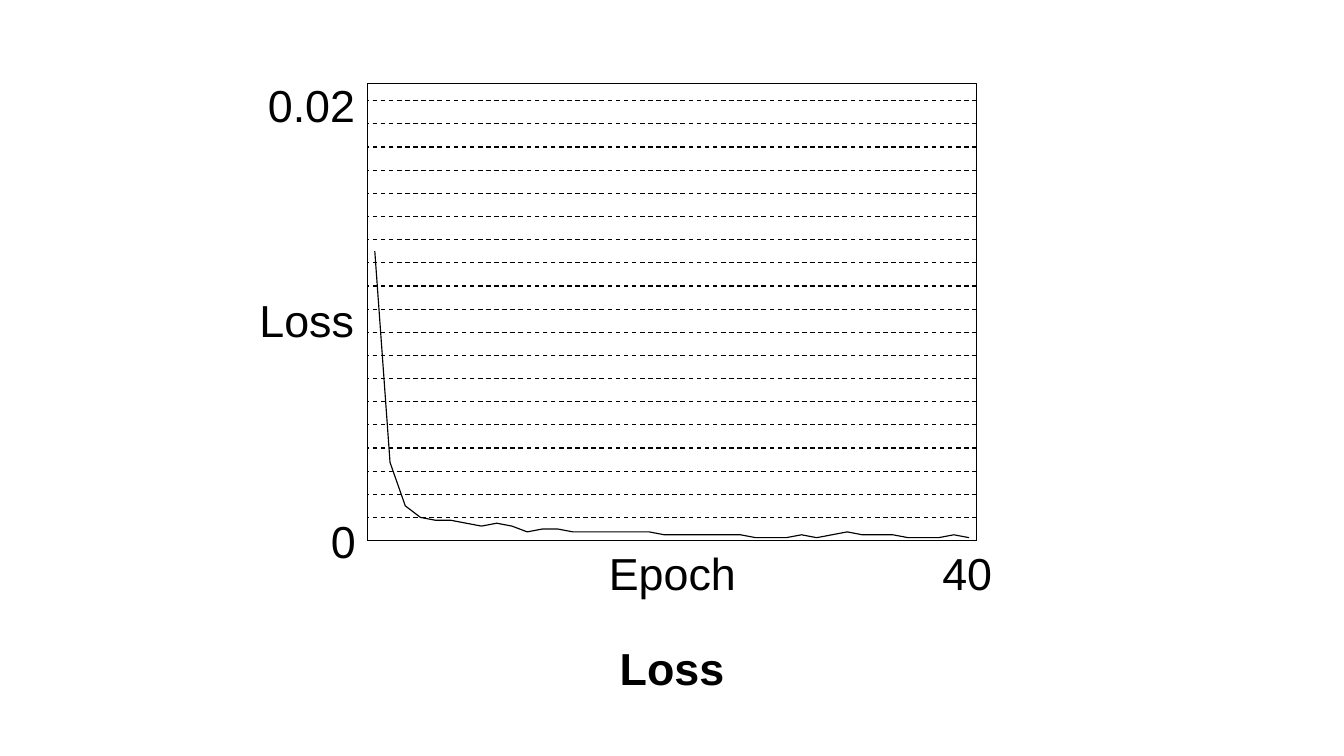
from dataclasses import dataclass

from pptx import Presentation
from pptx.chart.data import CategoryChartData
from pptx.dml.color import RGBColor
from pptx.enum.chart import XL_CHART_TYPE, XL_MARKER_STYLE, XL_TICK_LABEL_POSITION, XL_TICK_MARK
from pptx.enum.dml import MSO_LINE
from pptx.enum.text import MSO_ANCHOR, MSO_AUTO_SIZE, PP_ALIGN
from pptx.oxml import parse_xml
from pptx.oxml.ns import nsdecls
from pptx.util import Inches, Pt

LINE_CHART = XL_CHART_TYPE.LINE
NO_MARKER = XL_MARKER_STYLE.NONE
NO_LABELS = XL_TICK_LABEL_POSITION.NONE
NO_TICKS = XL_TICK_MARK.NONE
DASH = MSO_LINE.DASH
MIDDLE = MSO_ANCHOR.MIDDLE
GROW = MSO_AUTO_SIZE.SHAPE_TO_FIT_TEXT
CENTER = PP_ALIGN.CENTER

COLUMNS, ROWS = 16, 9
TITLE_ONLY = 5
PLOT_INSET = 0.02

LOSSES = [
    100, 27, 12, 8, 7, 7, 6, 5, 6, 5,
    3, 4, 4, 3, 3, 3, 3, 3, 3, 2,
    2, 2, 2, 2, 2, 1, 1, 1, 2, 1,
    2, 3, 2, 2, 2, 1, 1, 1, 2, 1,
]

LABELS = [
    ("Epoch", (7.15, 6.45, 1.73, 0.75)),
    ("Loss", (2.99, 3.43, 1.34, 0.75)),
    ("40", (11.12, 6.45, 0.8, 0.75)),
    ("0.02", (3.09, 0.88, 1.25, 0.75)),
    ("0", (3.84, 6.07, 0.5, 0.75)),
]


@dataclass(frozen=True)
class Theme:
    font: str = "Arial"
    ink: str = "000000"
    label_size: float = 38.4
    chart_size: float = 10
    line_width: float = 1


class LossSlide:
    """Draws titles, labels and line charts on a grid of columns and rows."""

    def __init__(self, presentation, theme):
        self.theme = theme
        self.ink = RGBColor.from_string(theme.ink)
        self.column = presentation.slide_width / COLUMNS
        self.row = presentation.slide_height / ROWS
        self.slide = presentation.slides.add_slide(presentation.slide_layouts[TITLE_ONLY])

    def place(self, box):
        left, top, width, height = box
        return (round(left * self.column), round(top * self.row),
                round(width * self.column), round(height * self.row))

    def style_font(self, font, size, bold=False):
        font.name = self.theme.font
        font.size = Pt(size)
        font.bold = bold
        font.color.rgb = self.ink

    def style_line(self, line):
        line.color.rgb = self.ink
        line.width = Pt(self.theme.line_width)

    def set_text(self, text_frame, text, bold=False):
        text_frame.text = text
        paragraph = text_frame.paragraphs[0]
        self.style_font(paragraph.runs[0].font, self.theme.label_size, bold)
        return paragraph

    def title(self, text, box):
        title = self.slide.shapes.title
        title.left, title.top, title.width, title.height = self.place(box)
        title.text_frame.vertical_anchor = MIDDLE
        self.set_text(title.text_frame, text, bold=True).alignment = CENTER

    def label(self, text, box):
        text_frame = self.slide.shapes.add_textbox(*self.place(box)).text_frame
        text_frame.word_wrap = False
        text_frame.auto_size = GROW
        self.set_text(text_frame, text)

    def line_chart(self, name, values, box, maximum, step):
        data = CategoryChartData()
        data.categories = [str(number) for number in range(1, len(values) + 1)]
        data.add_series(name, values)
        chart = self.slide.shapes.add_chart(LINE_CHART, *self.place(box), data).chart
        chart.has_title = False
        chart.has_legend = False
        self.style_font(chart.font, self.theme.chart_size)

        for axis in (chart.category_axis, chart.value_axis):
            axis.tick_label_position = NO_LABELS
            axis.major_tick_mark = NO_TICKS
            axis.minor_tick_mark = NO_TICKS
            axis.format.line.fill.background()
        scale = chart.value_axis
        scale.minimum_scale = 0
        scale.maximum_scale = maximum
        scale.major_unit = step
        scale.has_major_gridlines = True
        self.style_line(scale.major_gridlines.format.line)
        scale.major_gridlines.format.line.dash_style = DASH

        series = chart.plots[0].series[0]
        series.smooth = False
        series.marker.style = NO_MARKER
        self.style_line(series.format.line)
        chart.plots[0].vary_by_categories = False
        self.frame_plot(chart)

    def frame_plot(self, chart):
        plot_area = chart._chartSpace.chart.plotArea
        for crossing in plot_area.xpath("./c:valAx/c:crossBetween"):
            crossing.set("val", "midCat")
        for layout in plot_area.xpath("./c:layout"):
            plot_area.remove(layout)
        span = 1 - 2 * PLOT_INSET
        plot_area.insert(0, parse_xml(
            f'<c:layout {nsdecls("c")}><c:manualLayout><c:layoutTarget val="inner"/>'
            f'<c:xMode val="edge"/><c:yMode val="edge"/>'
            f'<c:x val="{PLOT_INSET}"/><c:y val="{PLOT_INSET}"/>'
            f'<c:w val="{span}"/><c:h val="{span}"/></c:manualLayout></c:layout>'))
        plot_area.append(parse_xml(
            f'<c:spPr {nsdecls("c", "a")}><a:noFill/>'
            f'<a:ln w="{Pt(self.theme.line_width)}"><a:solidFill>'
            f'<a:srgbClr val="{self.theme.ink}"/></a:solidFill></a:ln></c:spPr>'))


def main():
    presentation = Presentation()
    presentation.slide_width = Inches(COLUMNS)
    presentation.slide_height = Inches(ROWS)
    page = LossSlide(presentation, Theme())
    page.line_chart("Series 1", LOSSES, (4.22, 0.88, 7.56, 5.67), maximum=158, step=8)
    for text, box in LABELS:
        page.label(text, box)
    page.title("Loss", (0.44, 7.24, 15.12, 1.41))
    presentation.save("out.pptx")


if __name__ == "__main__":
    main()
